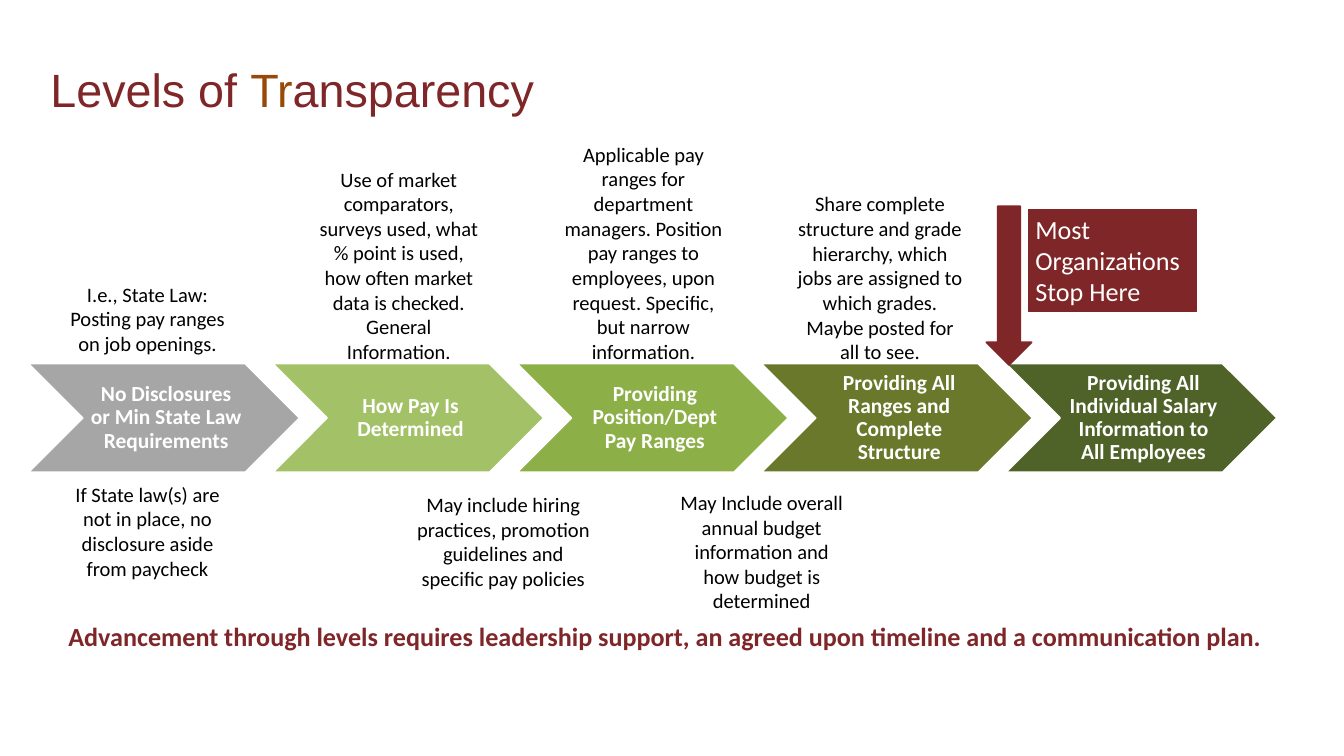
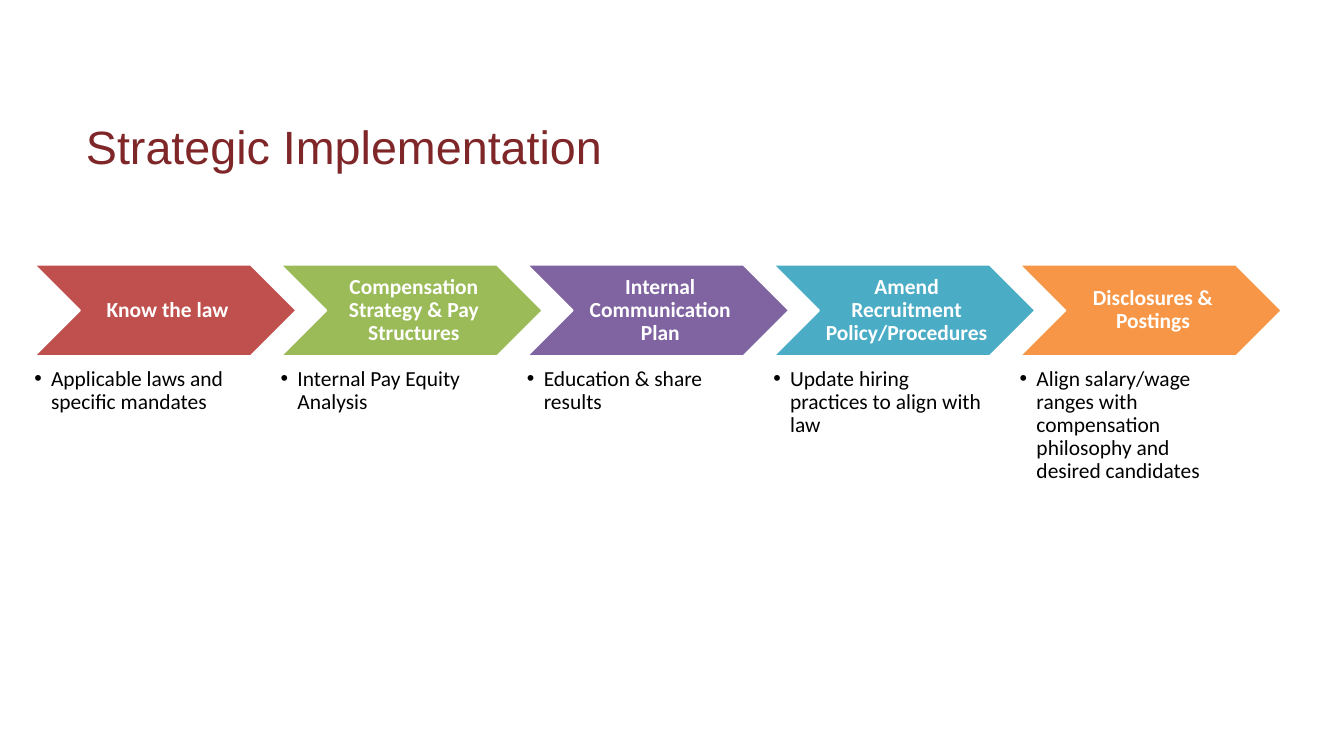
"""Build two slides on pay transparency: its levels, then the steps to reach them."""
from dataclasses import dataclass
from typing import Optional

from lxml import etree
from pptx import Presentation
from pptx.dml.color import RGBColor
from pptx.enum import shapes as kinds, text as modes
from pptx.oxml import ns
from pptx.util import Inches, Pt


@dataclass(frozen=True)
class Theme:
    wine: str = "7F2629"
    rust: str = "984807"
    white: str = "FFFFFF"
    black: str = "000000"
    head: str = "Arial"
    body: str = "Calibri"
    title: int = 50
    call: int = 28
    step: int = 23
    note: int = 22


THEME = Theme()
CENTER = modes.PP_ALIGN.CENTER
PLAIN = (0.1, 0.05, 0.1, 0.05)
TIGHT = (0.1, 0.03, 0.03, 0.03)
FLUSH = (0, 0, 0, 0)


@dataclass(frozen=True)
class Box:
    left: float
    top: float
    width: float
    height: float

    def place(self) -> tuple:
        return tuple(Inches(n) for n in (self.left, self.top, self.width, self.height))


@dataclass(frozen=True)
class Run:
    text: str
    size: int
    color: str = THEME.black
    bold: bool = False
    font: str = THEME.body


@dataclass(frozen=True)
class Step:
    label: str
    color: str
    point: Optional[str] = None


@dataclass(frozen=True)
class Chain:
    first: Box
    pitch: float
    steps: tuple


@dataclass(frozen=True)
class Note:
    box: Box
    text: str


LEVELS = Chain(Box(0.42, 5.41, 4.04, 1.62), 0.9, (
    Step("No Disclosures or Min State Law Requirements", "A6A6A6"),
    Step("How Pay Is Determined", "A3C167"),
    Step("Providing Position/Dept Pay Ranges", "8CAF47"),
    Step("Providing All Ranges and Complete Structure", "69782A"),
    Step("Providing All Individual Salary Information to All Employees", "4F6228"),
))
PLAN = Chain(Box(0.51, 3.94, 3.9, 1.36), 0.94, (
    Step("Know the law", "C0504D", "Applicable laws and specific mandates"),
    Step("Compensation Strategy & Pay Structures", "9BBB59", "Internal Pay Equity Analysis"),
    Step("Internal Communication Plan", "8064A2", "Education & share results"),
    Step("Amend Recruitment Policy/Procedures", "4BACC6",
         "Update hiring practices to align with law"),
    Step("Disclosures & Postings", "F79646",
         "Align salary/wage ranges with compensation philosophy and desired candidates"),
))
NOTES = (
    Note(Box(0.86, 4.14, 2.67, 1.21), "I.e., State Law: Posting pay ranges on job openings."),
    Note(Box(4.6, 2.43, 2.67, 3.06),
         "Use of market comparators, surveys used, what % point is used, "
         "how often market data is checked. General Information."),
    Note(Box(8.24, 2.06, 2.67, 3.43),
         "Applicable pay ranges for department managers. Position pay ranges "
         "to employees, upon request. Specific, but narrow information."),
    Note(Box(11.76, 2.8, 2.67, 2.69),
         "Share complete structure and grade hierarchy, which jobs are "
         "assigned to which grades. Maybe posted for all to see."),
    Note(Box(6.07, 7.27, 2.84, 1.58),
         "May include hiring practices, promotion guidelines and specific pay policies"),
    Note(Box(10, 7.24, 2.67, 1.95),
         "May Include overall annual budget information and how budget is determined"),
    Note(Box(0.86, 7.12, 2.67, 1.58),
         "If State law(s) are not in place, no disclosure aside from paycheck"),
)


def write(shape, runs: tuple, inset: tuple = PLAIN, align=modes.PP_ALIGN.LEFT,
          middle: bool = False, grow: bool = False):
    """Fill a shape with one paragraph of runs and return the paragraph."""
    frame = shape.text_frame
    frame.word_wrap = True
    frame.auto_size = modes.MSO_AUTO_SIZE.SHAPE_TO_FIT_TEXT if grow else modes.MSO_AUTO_SIZE.NONE
    frame.vertical_anchor = modes.MSO_ANCHOR.MIDDLE if middle else modes.MSO_ANCHOR.TOP
    (frame.margin_left, frame.margin_top,
     frame.margin_right, frame.margin_bottom) = (Inches(n) for n in inset)
    para = frame.paragraphs[0]
    para.alignment = align
    for item in runs:
        run = para.add_run()
        run.text = item.text
        run.font.name = item.font
        run.font.size = Pt(item.size)
        run.font.bold = item.bold
        run.font.color.rgb = RGBColor.from_string(item.color)
    return para


def add_text(slide, box: Box, *runs: Run, **style):
    """Add a text box and return its paragraph."""
    return write(slide.shapes.add_textbox(*box.place()), runs, **style)


def add_form(slide, kind, box: Box, fill: str, line: str, weight: float = 2):
    """Add a flat preset shape."""
    shape = slide.shapes.add_shape(kind, *box.place())
    shape.shadow.inherit = False
    shape.fill.solid()
    shape.fill.fore_color.rgb = RGBColor.from_string(fill)
    shape.line.color.rgb = RGBColor.from_string(line)
    shape.line.width = Pt(weight)
    return shape


def add_title(slide, left: float, top: float, *parts: tuple) -> None:
    """Add the slide title from pairs of text and colour."""
    runs = (Run(text, THEME.title, color, font=THEME.head) for text, color in parts)
    para = add_text(slide, Box(left, top, 10.64, 0.89), *runs, inset=FLUSH, grow=True)
    para.line_spacing = Pt(70)


def add_point(slide, box: Box, text: str) -> None:
    """Add a bullet point."""
    para = add_text(slide, box, Run(text, THEME.step), inset=FLUSH)
    para.level = 1
    para.line_spacing = 0.9
    para.space_after = Pt(3)
    props = para._p.get_or_add_pPr()
    props.set("marL", str(Inches(0.25)))
    props.set("indent", str(-Inches(0.25)))
    etree.SubElement(props, ns.qn("a:buFont"), typeface="Arial")
    etree.SubElement(props, ns.qn("a:buChar"), char="•")


def add_chain(slide, chain: Chain) -> None:
    """Add a row of chevrons with labels and any points below."""
    first = chain.first
    wide, high = first.width, first.height
    for i, step in enumerate(chain.steps):
        left = first.left + i * wide * chain.pitch
        add_form(slide, kinds.MSO_SHAPE.CHEVRON, Box(left, first.top, wide, high),
                 step.color, THEME.white)
        label = add_text(slide, Box(left + high / 2, first.top, wide - high, high),
                         Run(step.label, THEME.step, THEME.white, True),
                         inset=TIGHT, align=CENTER, middle=True)
        label.line_spacing = 0.9
        label.space_after = Pt(8)
        if step.point:
            add_point(slide, Box(left, first.top + high + 0.17, wide * 0.8, 1.76), step.point)


def draw_levels(slide) -> None:
    """Draw the levels of transparency."""
    add_chain(slide, LEVELS)
    add_title(slide, 0.75, 0.76, ("Levels of ", THEME.wine), ("Tr", THEME.rust),
              ("ansparency", THEME.wine))
    add_form(slide, kinds.MSO_SHAPE.DOWN_ARROW, Box(14.68, 3.07, 0.67, 2.36),
             THEME.wine, THEME.wine)
    stop = add_form(slide, kinds.MSO_SHAPE.RECTANGLE, Box(15.31, 3.12, 2.5, 1.51),
                    THEME.wine, THEME.wine, 0.75)
    write(stop, (Run("Most Organizations Stop Here", THEME.call, THEME.white),), grow=True)
    for note in NOTES:
        add_text(slide, note.box, Run(note.text, THEME.note), align=CENTER, grow=True)
    add_text(slide, Box(0.92, 9.19, 18.08, 0.57),
             Run("Advancement through levels requires leadership support, "
                 "an agreed upon timeline and a communication plan.",
                 THEME.call, THEME.wine, True), grow=True)


def draw_plan(slide) -> None:
    """Draw the steps of the plan."""
    add_chain(slide, PLAN)
    add_title(slide, 1.28, 1.62, ("Strategic Implementation", THEME.wine))


def main() -> None:
    """Build and save the deck."""
    deck = Presentation()
    deck.slide_width, deck.slide_height = Inches(20), Inches(11.25)
    for draw in (draw_levels, draw_plan):
        draw(deck.slides.add_slide(deck.slide_layouts[6]))
    deck.save("out.pptx")


if __name__ == "__main__":
    main()
